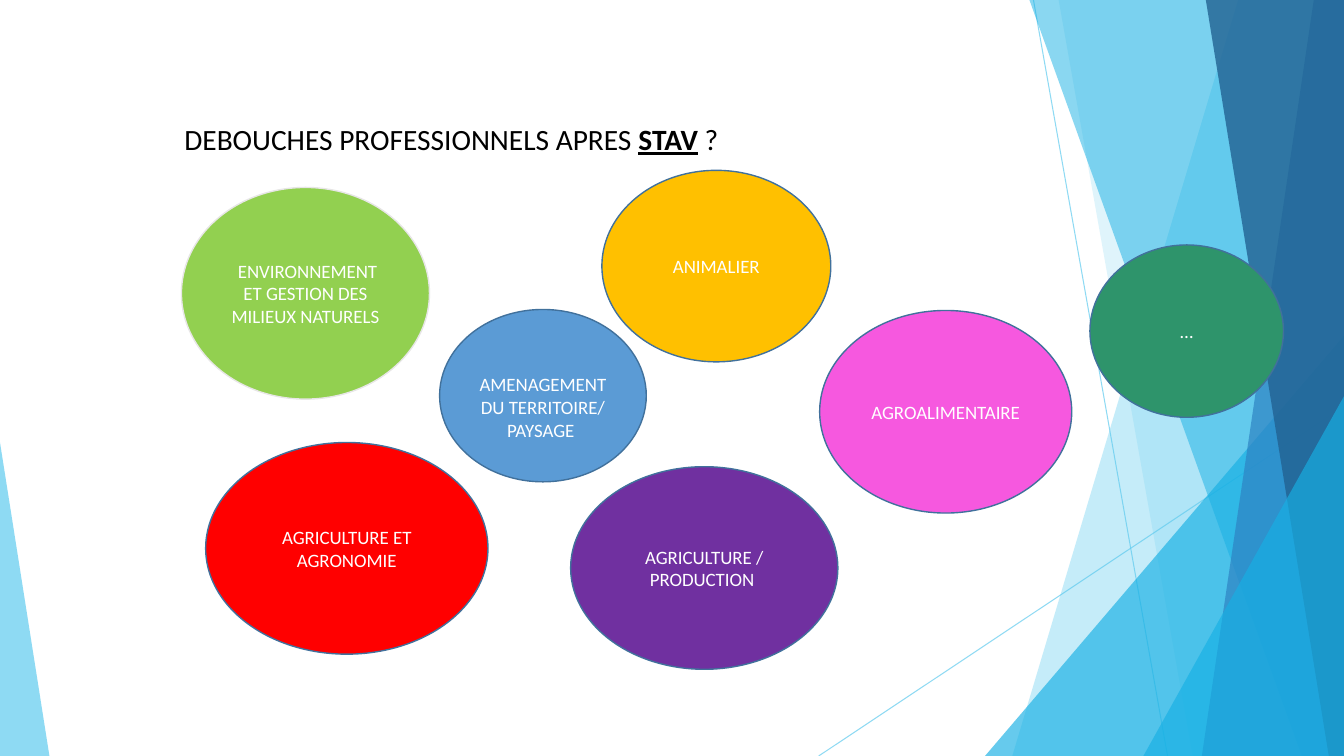
from lxml.etree import SubElement
from pptx import Presentation
from pptx.dml.color import RGBColor as RGB
from pptx.enum.shapes import MSO_CONNECTOR as LINK, MSO_SHAPE as SHAPE
from pptx.enum.text import MSO_ANCHOR as ANCHOR, PP_ALIGN as ALIGN
from pptx.oxml.ns import qn
from pptx.util import Inches, Pt

COLS, ROWS = 13.33, 7.5
CELL = Inches(1)
INSET = Inches(0.08)
FONT = "Calibri"
HUES = {
    "sky": "5FCBEF", "cyan": "17B0E4", "blue": "2E83C3", "navy": "226292",
    "lime": "92D050", "red": "FF0000", "plum": "7030A0", "gold": "FFC000",
    "steel": "5B9BD5", "pink": "F658DF", "green": "2E946B",
    "edge": "41719C", "pale": "E7E6E6", "white": "FFFFFF", "black": "000000",
}
RAYS = [(10.25, 0, 11.58, 7.5), (13.33, 4.03, 8.12, 7.5)]
SHARDS = [
    ("band", 12.28, 10.04, "sky", 36),
    ("band", 10.5, 11.83, "sky", 20),
    ("wedge", 9.77, 3.33, "cyan", 66),
    ("band", 10.21, 12.91, "cyan", 50),
    ("band", 13.03, 11.92, "blue", 70),
    ("band", 11.96, 13.18, "navy", 80),
    ("wedge", 11.34, 3.93, "cyan", 66),
]
FIELDS = [
    (1.8, 1.86, 2.46, 2.1, "lime", "pale", " ENVIRONNEMENT ET GESTION DES MILIEUX NATURELS"),
    (2.04, 4.39, 2.8, 2.1, "red", "edge", "AGRICULTURE ET AGRONOMIE"),
    (5.66, 4.63, 2.65, 2.01, "plum", "edge", "AGRICULTURE / PRODUCTION "),
    (5.97, 1.69, 2.27, 1.9, "gold", "edge", "ANIMALIER"),
    (4.36, 3.07, 2.05, 1.71, "steel", "edge", " AMENAGEMENT DU TERRITOIRE/ PAYSAGE "),
    (8.13, 3.08, 2.5, 2.01, "pink", "edge", "AGROALIMENTAIRE"),
    (10.81, 2.43, 1.92, 1.71, "green", "edge", "…"),
]


def grid(*cells):
    """Turn grid cells into slide lengths."""
    return [round(c * CELL) for c in cells]


def fade(shape, share):
    """Set the opacity of the first colour of a shape, in percent."""
    tint = next(shape._element.spPr.iter(qn("a:srgbClr")))
    SubElement(tint, qn("a:alpha")).set("val", str(share * 1000))


def paint(shape, hue, edge=None):
    """Fill a shape, and outline it when an edge colour is given."""
    shape.shadow.inherit = False
    shape.fill.solid()
    shape.fill.fore_color.rgb = RGB.from_string(HUES[hue])
    if edge:
        shape.line.color.rgb = RGB.from_string(HUES[edge])
        shape.line.width = Pt(1)
    else:
        shape.line.fill.background()


def write(para, text, size, hue, strong=False):
    """Add one run to a paragraph."""
    run = para.add_run()
    run.text = text
    font = run.font
    font.name, font.size = FONT, Pt(size)
    font.color.rgb = RGB.from_string(HUES[hue])
    if strong:
        font.bold = font.underline = True


def ray(slide, x, y, ends):
    """Draw one thin line of the backdrop."""
    x1, y1, x2, y2 = ends
    line = slide.shapes.add_connector(LINK.STRAIGHT, *grid(x + x1, y + y1, x + x2, y + y2))
    line.line.color.rgb = RGB.from_string(HUES["sky"])
    line.line.width = Pt(0.75)
    fade(line, 70)
    SubElement(line._element.spPr, qn("a:effectLst"))


def wedge(slide, box, apex, hue, share):
    """Draw a see-through triangle with its apex at a share of its width."""
    shape = slide.shapes.add_shape(SHAPE.ISOSCELES_TRIANGLE, *grid(*box))
    shape.adjustments[0] = apex
    paint(shape, hue)
    fade(shape, share)


def band(slide, box, top, foot, hue, share):
    """Draw a see-through band from a slanted left side to the right edge."""
    x, y, w, h = box
    start, *rest = [grid(x + a, y + b) for a, b in ((top, 0), (w, 0), (w, h), (foot, h))]
    path = slide.shapes.build_freeform(*start)
    path.add_line_segments(rest, close=True)
    shape = path.convert_to_shape()
    paint(shape, hue)
    fade(shape, share)


def backdrop(slide, box):
    """Draw the faceted backdrop."""
    x, y, w, h = box
    for ends in RAYS:
        ray(slide, x, y, ends)
    for kind, a, b, hue, share in SHARDS:
        if kind == "band":
            band(slide, box, a, b, hue, share)
        else:
            wedge(slide, (x + a, y + b, w - a, h - b), 1, hue, share)
    wedge(slide, (x, y + 4.39, 0.49, h - 4.39), 0, "sky", 70)


def heading(slide, box):
    """Write the question at the top."""
    frame = slide.shapes.add_textbox(*grid(*box)).text_frame
    frame.word_wrap = True
    para = frame.paragraphs[0]
    write(para, "DEBOUCHES PROFESSIONNELS APRES ", 21, "black")
    write(para, "STAV", 21, "black", True)
    write(para, " ?", 21, "black")


def bubbles(slide, box):
    """Draw an oval for each professional field."""
    x, y, _, _ = box
    for left, top, w, h, hue, edge, text in FIELDS:
        oval = slide.shapes.add_shape(SHAPE.OVAL, *grid(x + left, y + top, w, h))
        paint(oval, hue, edge)
        frame = oval.text_frame
        frame.word_wrap = True
        frame.margin_left = frame.margin_right = INSET
        frame.vertical_anchor = ANCHOR.MIDDLE
        para = frame.paragraphs[0]
        para.alignment = ALIGN.CENTER
        write(para, text, 13.5, "white")


def main():
    """Build and save the slide."""
    deck = Presentation()
    deck.slide_width, deck.slide_height = grid(COLS, ROWS)
    slide = deck.slides.add_slide(deck.slide_layouts[6])
    page = (0, 0, COLS, ROWS)
    backdrop(slide, page)
    heading(slide, (1.73, 1.15, 7.91, 0.45))
    bubbles(slide, page)
    deck.save("out.pptx")


if __name__ == "__main__":
    main()
